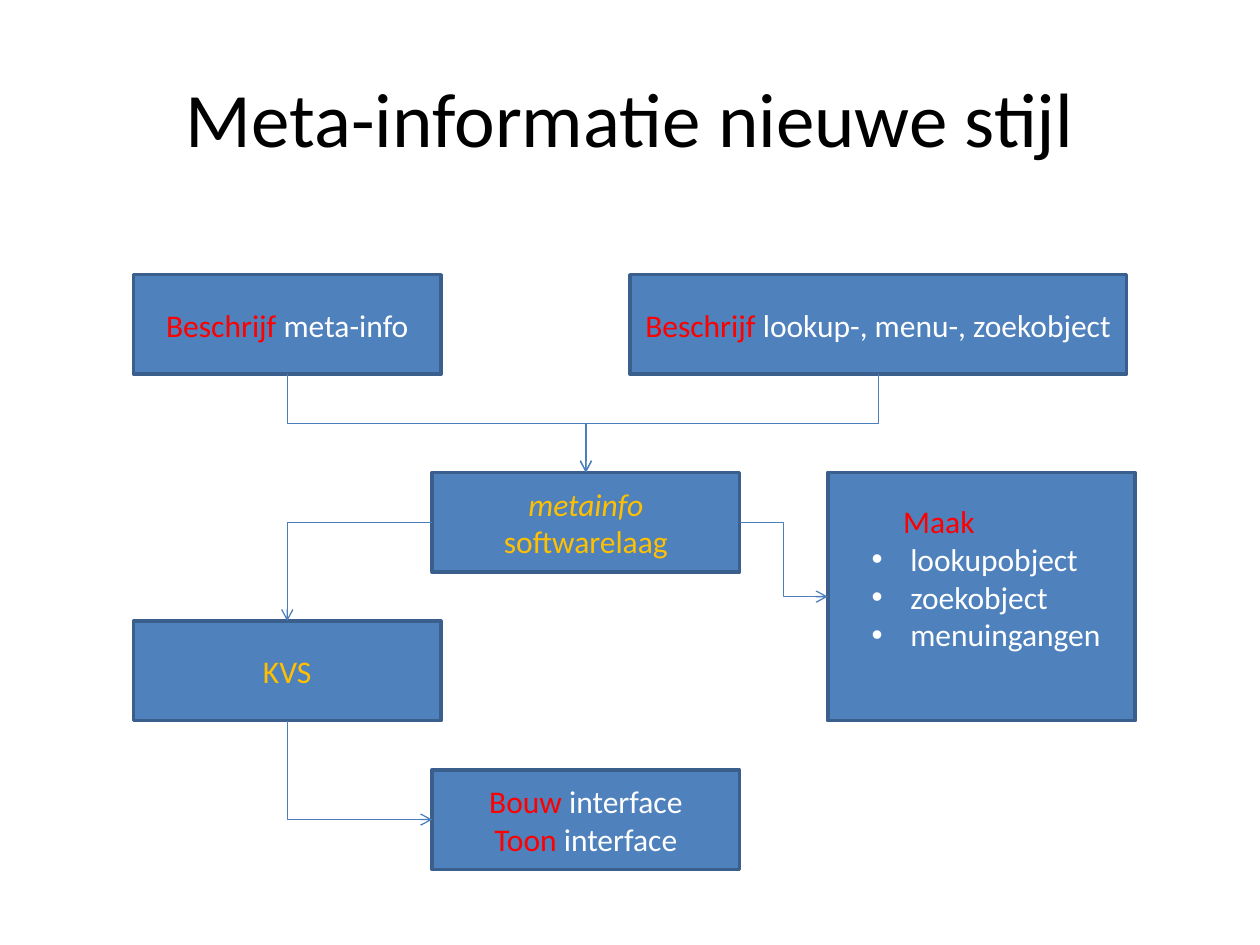
from lxml.etree import SubElement
from pptx import Presentation
from pptx.dml.color import RGBColor
from pptx.enum.shapes import MSO_CONNECTOR, MSO_SHAPE
from pptx.enum.text import MSO_ANCHOR, PP_ALIGN
from pptx.oxml.ns import qn
from pptx.util import Inches, Pt

FONT = "Calibri"
COLORS = {"fill": "4F81BD", "border": "3A5F8C", "arrow": "4B7EBC",
          "black": "000000", "white": "FFFFFF", "red": "FF0000", "gold": "FFC000"}
TITLE = "Meta-informatie nieuwe stijl"

# Grid of the diagram, in inches
COLUMNS = {"left": 1.06, "middle": 3.43, "upper right": 5, "right": 6.57}
ROWS = [2.18, 3.75, 4.93, 6.11]
BOX_W, BOX_H = 2.44, 0.79
WIDE_W, TALL_H = 3.94, ROWS[2] + BOX_H - ROWS[1]

# name: (column, row, width, height, paragraphs of (text, colour, italic) runs)
STEPS = {
    "meta": ("left", 0, BOX_W, BOX_H,
             [[("Beschrijf", "red", False), (" meta-info", "white", False)]]),
    "objects": ("upper right", 0, WIDE_W, BOX_H,
                [[("Beschrijf", "red", False),
                  (" lookup-, menu-, zoekobject", "white", False)]]),
    "layer": ("middle", 1, BOX_W, BOX_H,
              [[("metainfo ", "gold", True), ("softwarelaag", "gold", False)]]),
    "interface": ("middle", 3, BOX_W, BOX_H,
                  [[("Bouw", "red", False), (" interface", "white", False)],
                   [("Toon", "red", False), (" interface", "white", False)]]),
    "kvs": ("left", 2, BOX_W, BOX_H, [[("KVS", "gold", False)]]),
    "make": ("right", 1, BOX_W, TALL_H,
             [[("Maak", "red", False)]]
             + [[(f" {item}", "white", False)]
                for item in ("lookupobject", "zoekobject", "menuingangen")]),
}

# (from, side, to, side, bends)
TOP, LEFT, BOTTOM, RIGHT = range(4)
FLOWS = [
    ("meta", BOTTOM, "layer", TOP, 2),
    ("objects", BOTTOM, "layer", TOP, 2),
    ("layer", RIGHT, "make", LEFT, 2),
    ("layer", LEFT, "kvs", TOP, 1),
    ("kvs", BOTTOM, "interface", LEFT, 1),
]


def rgb(name):
    return RGBColor.from_string(COLORS[name])


def add_run(paragraph, text, size, color, italic=False):
    run = paragraph.add_run()
    run.text = text
    run.font.name = FONT
    run.font.size = Pt(size)
    run.font.italic = italic
    run.font.color.rgb = rgb(color)


def add_step(slide, column, row, width, height, paragraphs):
    box = slide.shapes.add_shape(
        MSO_SHAPE.RECTANGLE, Inches(COLUMNS[column]), Inches(ROWS[row]),
        Inches(width), Inches(height))
    box.shadow.inherit = False
    box.fill.solid()
    box.fill.fore_color.rgb = rgb("fill")
    box.line.color.rgb = rgb("border")
    box.line.width = Pt(2)
    frame = box.text_frame
    frame.word_wrap = True
    frame.vertical_anchor = MSO_ANCHOR.MIDDLE
    for index, runs in enumerate(paragraphs):
        paragraph = frame.add_paragraph() if index else frame.paragraphs[0]
        paragraph.alignment = PP_ALIGN.CENTER
        for text, color, italic in runs:
            add_run(paragraph, text, 18, color, italic)
    return box


def format_list(frame):
    """Left-align the heading and hang bullets on the items below it."""
    frame.margin_bottom = Inches(0.35)
    for index, paragraph in enumerate(frame.paragraphs):
        paragraph.alignment = PP_ALIGN.LEFT
        paragraph.level = 1
        properties = paragraph._p.get_or_add_pPr()
        properties.set("marL", str(Inches(0.5)))
        properties.set("indent", str(Inches(-0.25 if index else 0)))
        if index:
            SubElement(properties, qn("a:buFont")).set("typeface", "Arial")
            SubElement(properties, qn("a:buChar")).set("char", "•")


def add_flow(slide, source, start_side, target, end_side, bends):
    flow = slide.shapes.add_connector(MSO_CONNECTOR.ELBOW, 0, 0, 0, 0)
    flow.begin_connect(source, start_side)
    flow.end_connect(target, end_side)
    flow.line.color.rgb = rgb("arrow")
    flow.line.width = Pt(0.75)
    SubElement(flow.line._get_or_add_ln(), qn("a:tailEnd")).set("type", "arrow")
    properties = flow._element.spPr
    SubElement(properties, qn("a:effectLst"))
    properties.find(qn("a:prstGeom")).set("prst", f"bentConnector{bends + 1}")

    # Turn the elbow so that it leaves its box at a right angle
    rightward = flow.end_x > flow.begin_x
    left, top, width, height = flow.left, flow.top, flow.width, flow.height
    rotation, flips = 0, ()
    if start_side == BOTTOM:
        rotation, flips = (270, ("flipH",)) if rightward else (90, ())
        flow.left, flow.top = left + (width - height) // 2, top + (height - width) // 2
        flow.width, flow.height = height, width
    elif start_side == LEFT:
        rotation, flips = 180, ("flipV",)
    frame = properties.find(qn("a:xfrm"))
    for flip in ("flipH", "flipV"):
        frame.set(flip, "1" if flip in flips else "0")
    frame.set("rot", str(rotation * 60000))


def main():
    deck = Presentation()
    deck.slide_width, deck.slide_height = Inches(10), Inches(7.5)
    slide = deck.slides.add_slide(deck.slide_layouts[6])

    # Title
    title = slide.shapes.add_textbox(Inches(0.5), Inches(0.3), Inches(9), Inches(1.25))
    title.text_frame.word_wrap = True
    title.text_frame.vertical_anchor = MSO_ANCHOR.MIDDLE
    heading = title.text_frame.paragraphs[0]
    heading.alignment = PP_ALIGN.CENTER
    add_run(heading, TITLE, 44, "black")

    # Steps and the flows between them
    boxes = {name: add_step(slide, *step) for name, step in STEPS.items()}
    format_list(boxes["make"].text_frame)
    for source, start_side, target, end_side, bends in FLOWS:
        add_flow(slide, boxes[source], start_side, boxes[target], end_side, bends)

    deck.save("out.pptx")


if __name__ == "__main__":
    main()
